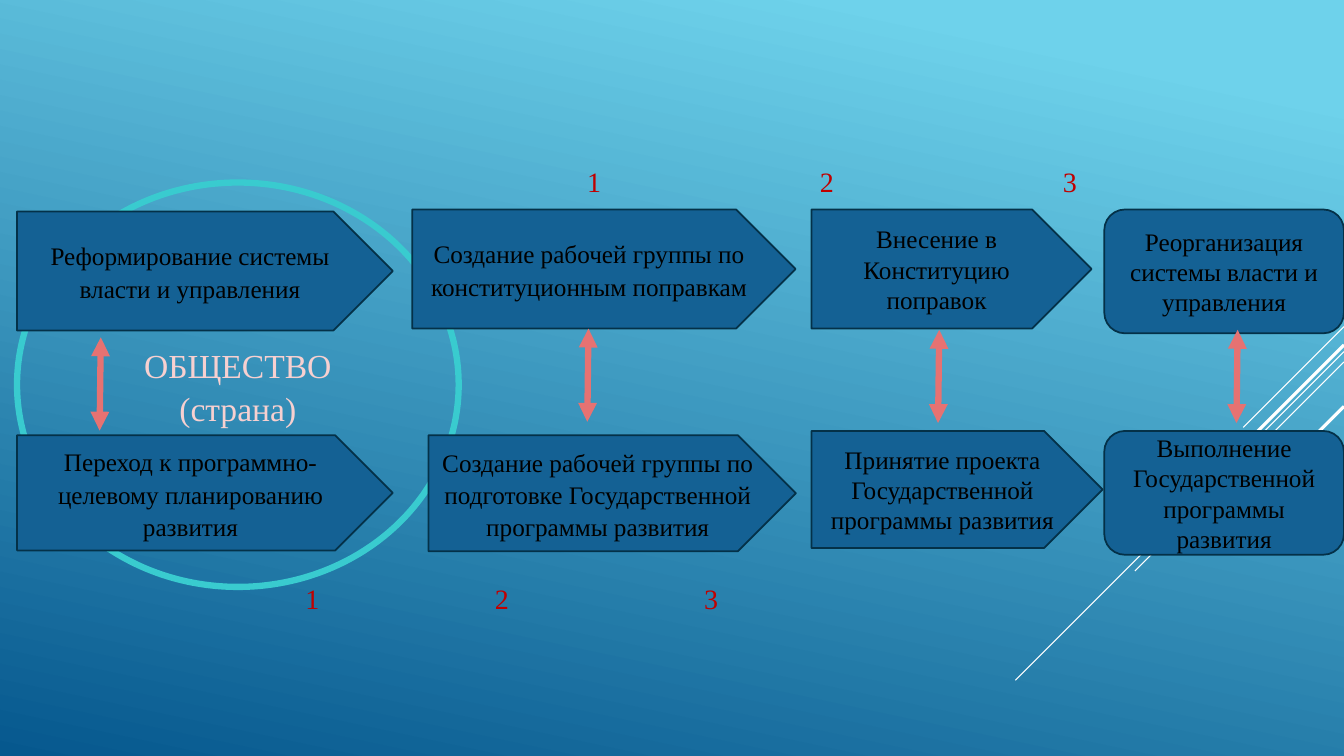
from lxml.etree import SubElement
from pptx import Presentation
from pptx.dml.color import RGBColor
from pptx.enum.shapes import MSO_CONNECTOR, MSO_SHAPE
from pptx.enum.text import MSO_ANCHOR, PP_ALIGN
from pptx.oxml.ns import qn
from pptx.util import Cm, Pt

COLORS = {
    "sky": "6ED2EB",
    "deep": "06588E",
    "box": "146194",
    "outline": "043148",
    "ring": "39CBCF",
    "society": "F7D0D0",
    "arrow": "E67272",
    "number": "C00000",
    "black": "000000",
    "white": "FFFFFF",
}


def write_text(shape, text, size=18, color="black", align=PP_ALIGN.CENTER,
               anchor=MSO_ANCHOR.MIDDLE, spacing=1.0, after=0):
    frame = shape.text_frame
    frame.word_wrap = True
    frame.vertical_anchor = anchor
    frame.text = text
    for paragraph in frame.paragraphs:
        paragraph.alignment = align
        paragraph.line_spacing = spacing
        paragraph.space_after = Pt(after)
        font = paragraph.runs[0].font
        font.name = "Times New Roman"
        font.size = Pt(size)
        font.color.rgb = RGBColor.from_string(COLORS[color])


def add_line(start, end, color="white", width=0.75):
    line = slide.shapes.add_connector(
        MSO_CONNECTOR.STRAIGHT, *(Cm(value) for value in start + end))
    line.line.color.rgb = RGBColor.from_string(COLORS[color])
    line.line.width = Pt(width)
    SubElement(line._element.spPr, qn("a:effectLst"))
    return line


presentation = Presentation()
presentation.slide_width = Cm(33.87)
presentation.slide_height = Cm(19.05)
slide = presentation.slides.add_slide(presentation.slide_layouts[6])

background = slide.background.fill
background.gradient()
background.gradient_angle = 258
for stop, position, color in zip(background.gradient_stops, (0.1, 1), ("sky", "deep")):
    stop.position = position
    stop.color.rgb = RGBColor.from_string(COLORS[color])

right_edge = 33.87
for top, length, width in [
    (8.23, 2.54, 0.75),
    (8.86, 8.28, 0.75),
    (9.12, 5.27, 0.75),
    (8.69, 4.85, 2.25),
    (10.24, 3.53, 2.25),
]:
    add_line((right_edge, top), (right_edge - length, top + length), width=width)

ring = slide.shapes.add_shape(MSO_SHAPE.OVAL, Cm(0.43), Cm(4.6), Cm(11.13), Cm(10.19))
ring.shadow.inherit = False
ring.fill.background()
ring.line.color.rgb = RGBColor.from_string(COLORS["ring"])
ring.line.width = Pt(4.5)
write_text(ring, "ОБЩЕСТВО\n(страна)", size=24, color="society", spacing=1.07)

PLATE, ROUNDED = MSO_SHAPE.PENTAGON, MSO_SHAPE.ROUNDED_RECTANGLE
for kind, left, top, width, height, spacing, after, text in [
    (PLATE, 0.43, 5.33, 9.47, 3, 1.07, 8, "Реформирование системы власти и управления"),
    (PLATE, 10.39, 5.28, 9.66, 3, 1.07, 8, "Создание рабочей группы по конституционным поправкам"),
    (PLATE, 20.45, 5.28, 7.06, 3, 1, 0, "Внесение в Конституцию поправок"),
    (ROUNDED, 27.83, 5.28, 6.04, 3.12, 1, 0, "Реорганизация системы власти и управления"),
    (PLATE, 0.43, 10.97, 9.47, 2.9, 1.07, 8, "Переход к программно-целевому планированию развития"),
    (PLATE, 10.8, 10.97, 9.26, 2.92, 1.07, 8,
     "Создание рабочей группы по подготовке Государственной программы развития"),
    (PLATE, 20.45, 10.86, 7.34, 2.95, 1, 0, "Принятие проекта Государственной программы развития"),
    (ROUNDED, 27.83, 10.86, 6.04, 3.12, 1, 0, "Выполнение Государственной программы развития"),
]:
    stage = slide.shapes.add_shape(kind, Cm(left), Cm(top), Cm(width), Cm(height))
    stage.shadow.inherit = False
    stage.fill.solid()
    stage.fill.fore_color.rgb = RGBColor.from_string(COLORS["box"])
    stage.line.color.rgb = RGBColor.from_string(COLORS["outline"])
    stage.line.width = Pt(1.25)
    write_text(stage, text, spacing=spacing, after=after)

for x, top in [(2.54, 8.5), (14.83, 8.28), (23.67, 8.31), (31.19, 8.31)]:
    arrow = add_line((x, top), (x - 0.03, top + 2.35), color="arrow", width=4.5)
    outline = arrow.line._get_or_add_ln()
    for end in ("a:headEnd", "a:tailEnd"):
        SubElement(outline, qn(end), type="triangle")

for left, top, width, centers in [
    (9.27, 4.02, 24.26, (14.97, 20.84, 26.96)),
    (2.95, 14.53, 29.36, (7.87, 12.65, 17.92)),
]:
    numbers = slide.shapes.add_textbox(Cm(left), Cm(top), Cm(width), Cm(1.1))
    numbers.text_frame.margin_left = 0
    write_text(numbers, "\t1\t2\t3", size=20, color="number",
               align=PP_ALIGN.LEFT, anchor=MSO_ANCHOR.TOP)
    properties = numbers.text_frame.paragraphs[0]._p.get_or_add_pPr()
    tabs = SubElement(properties, qn("a:tabLst"))
    for center in centers:
        SubElement(tabs, qn("a:tab"), pos=str(Cm(center - left)), algn="ctr")

presentation.save("out.pptx")
